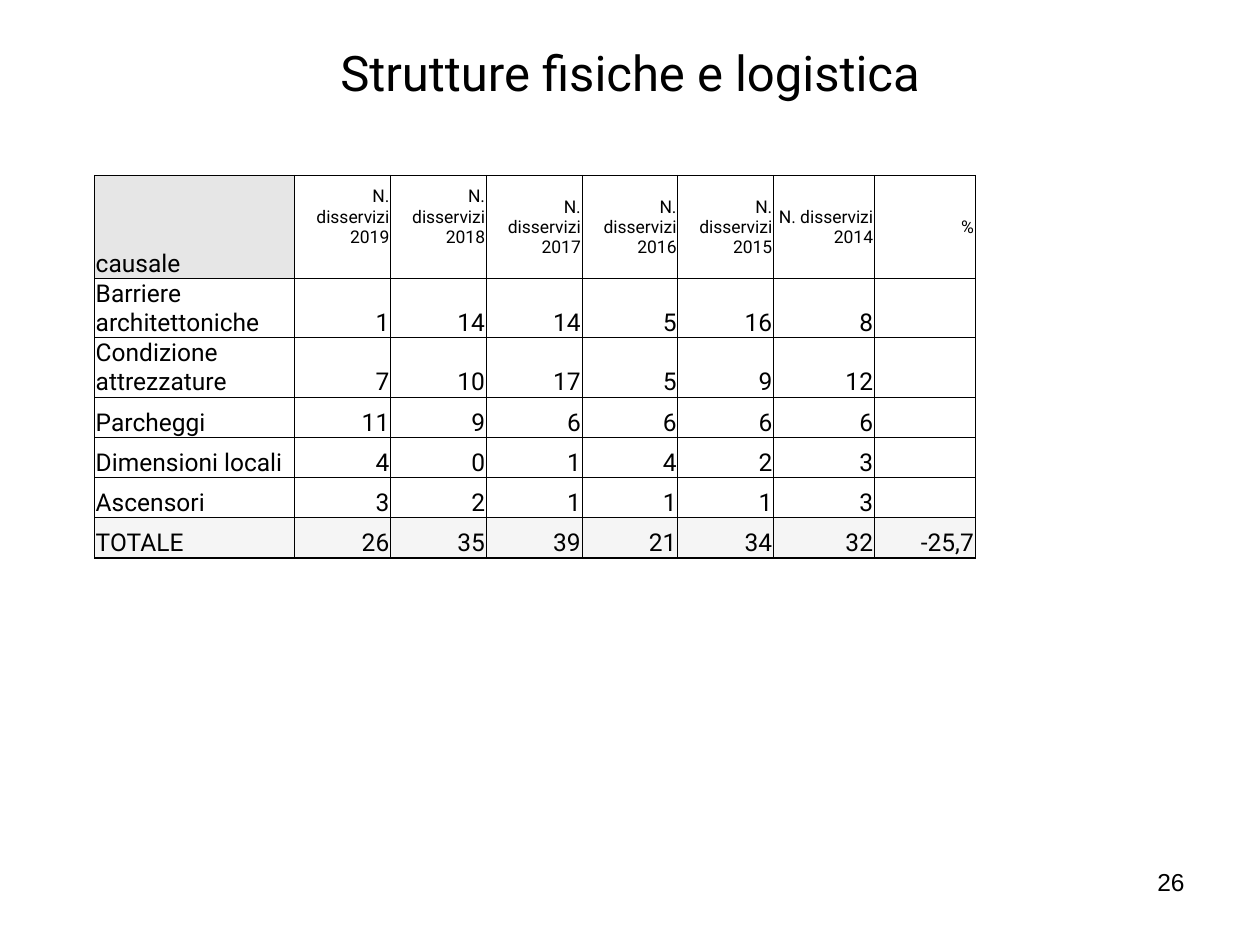
from dataclasses import dataclass

from lxml import etree
from pptx import Presentation
from pptx.dml.color import RGBColor
from pptx.enum import text
from pptx.oxml import ns
from pptx.util import Inches, Pt


@dataclass(frozen=True)
class Theme:
    font: str = "Roboto"
    number_font: str = "Arial"
    ink: str = "000000"
    paper: str = "FFFFFF"
    corner: str = "E6E6E6"
    total: str = "F5F5F5"
    title: int = 28
    body: int = 14
    head: int = 10
    thin: float = 0.5
    thick: float = 1


THEME = Theme()
YEARS = range(2019, 2013, -1)
HEADER = ["causale"] + [f"N. disservizi {year}" for year in YEARS] + ["%"]
ROWS = [
    ["Barriere architettoniche", 1, 14, 14, 5, 16, 8, ""],
    ["Condizione attrezzature", 7, 10, 17, 5, 9, 12, ""],
    ["Parcheggi", 11, 9, 6, 6, 6, 6, ""],
    ["Dimensioni locali", 4, 0, 1, 4, 2, 3, ""],
    ["Ascensori", 3, 2, 1, 1, 1, 3, ""],
    ["TOTALE", 26, 35, 39, 21, 34, 32, "-25,7"],
]
COL_WIDTHS = [1.59] + [0.76] * 5 + [0.8] * 2
ROW_HEIGHTS = [0.82] + [0.47] * 2 + [0.32] * 4
RAISED_COLS = (1, 2)


def write(tf, words, size, align, font=THEME.font):
    p = tf.paragraphs[0]
    p.alignment = align
    if words:
        r = p.add_run()
        r.text = words
        r.font.size = Pt(size)
        r.font.name = font
        r.font.color.rgb = RGBColor.from_string(THEME.ink)
    else:
        p.font.size = Pt(size)


def set_borders(cell, top, bottom):
    tc_pr = cell._tc.get_or_add_tcPr()
    widths = {"lnL": THEME.thin, "lnR": THEME.thin, "lnT": top, "lnB": bottom}
    for i, (side, width) in enumerate(widths.items()):
        ln = etree.Element(ns.qn(f"a:{side}"), w=str(Pt(width)))
        fill = etree.SubElement(ln, ns.qn("a:solidFill"))
        etree.SubElement(fill, ns.qn("a:srgbClr"), val=THEME.ink)
        tc_pr.insert(i, ln)


def add_title(s, box, words):
    sp = s.shapes.title
    sp.left, sp.top, sp.width, sp.height = box
    tf = sp.text_frame
    tf.word_wrap = True
    tf.auto_size = text.MSO_AUTO_SIZE.NONE
    tf.vertical_anchor = text.MSO_ANCHOR.MIDDLE
    tf.margin_bottom = Inches(0.76)
    write(tf, words, THEME.title, text.PP_ALIGN.CENTER)


def format_cell(cell, row, col, words):
    last = len(ROWS)
    is_head = row == 0 and col > 0
    cell.margin_left = cell.margin_right = cell.margin_top = Inches(0.01)
    cell.margin_bottom = Inches(0.16 if is_head and col in RAISED_COLS else 0)
    cell.vertical_anchor = text.MSO_ANCHOR.MIDDLE if is_head else text.MSO_ANCHOR.BOTTOM
    align = text.PP_ALIGN.RIGHT if col else text.PP_ALIGN.LEFT
    write(cell.text_frame, words, THEME.head if is_head else THEME.body, align)
    fill = THEME.total if row == last else THEME.paper
    if row == col == 0:
        fill = THEME.corner
    cell.fill.solid()
    cell.fill.fore_color.rgb = RGBColor.from_string(fill)
    set_borders(cell,
                THEME.thick if row == last else THEME.thin,
                THEME.thick if row >= last - 1 else THEME.thin)


def add_causes_table(s, box):
    data = [HEADER] + ROWS
    table = s.shapes.add_table(len(data), len(HEADER), *box).table
    table.first_row = table.horz_banding = False
    for column, width in zip(table.columns, COL_WIDTHS):
        column.width = Inches(width)
    for row, height in zip(table.rows, ROW_HEIGHTS):
        row.height = Inches(height)
    for i, values in enumerate(data):
        for j, value in enumerate(values):
            format_cell(table.cell(i, j), i, j, str(value))


def add_page_number(s, box, words):
    tf = s.shapes.add_textbox(*box).text_frame
    tf.word_wrap = True
    write(tf, words, THEME.body, text.PP_ALIGN.RIGHT, THEME.number_font)


def main():
    prs = Presentation()
    prs.slide_width, prs.slide_height = Inches(10), Inches(7.5)
    s = prs.slides.add_slide(prs.slide_layouts[5])
    add_title(s, [Inches(v) for v in (0.5, 0.3, 9, 1.25)], "Strutture fisiche e logistica")
    add_causes_table(s, [Inches(v) for v in (0.75, 1.39, sum(COL_WIDTHS), sum(ROW_HEIGHTS))])
    add_page_number(s, [Inches(v) for v in (7.17, 6.83, 2.33, 0.52)], "26")
    prs.save("out.pptx")


if __name__ == "__main__":
    main()
